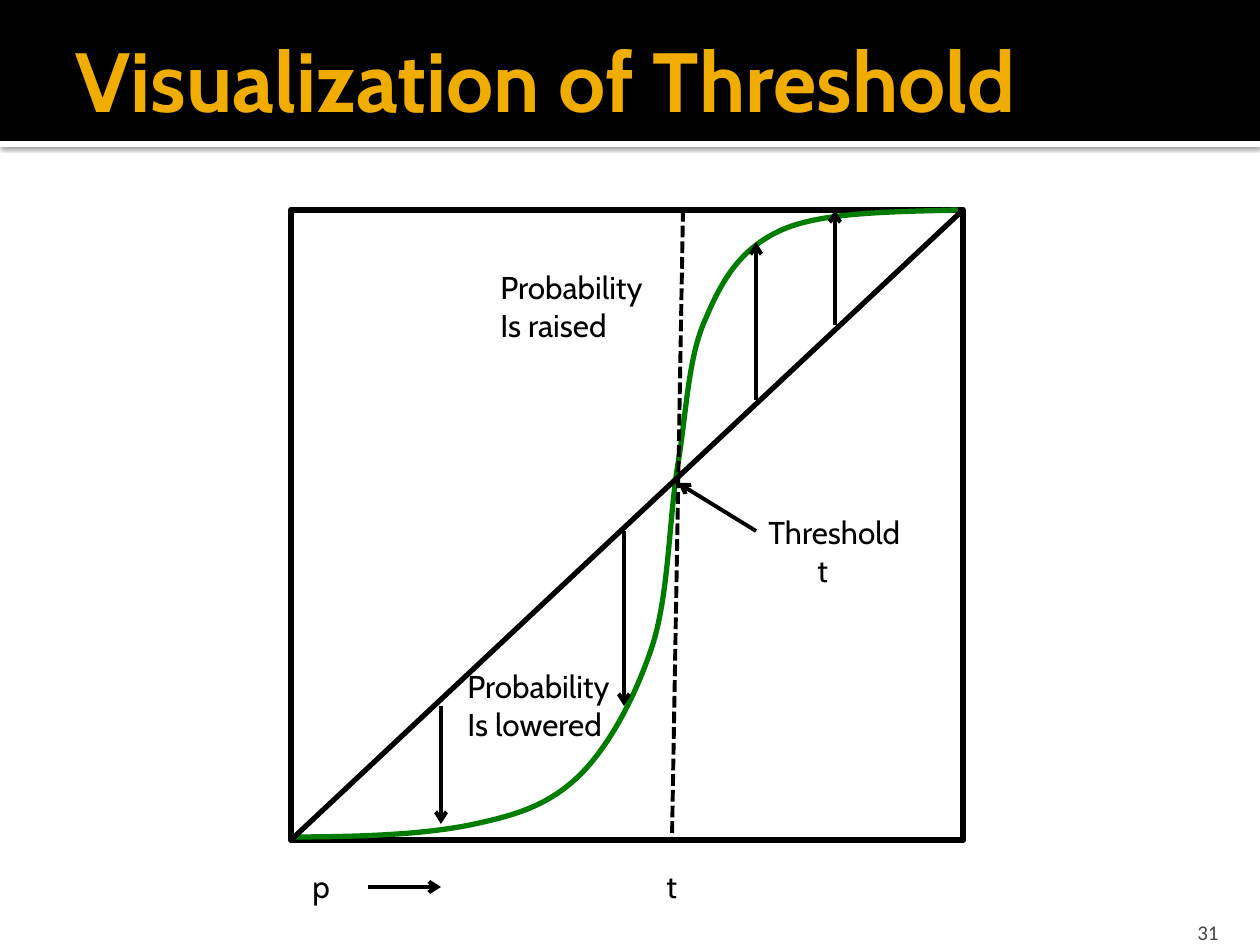
import pptx
import pptx.util
import pptx.dml.color
import pptx.enum.dml
import pptx.enum.shapes
import pptx.enum.text
import pptx.oxml
import pptx.oxml.ns

PX = 914400 / 126
BLACK, WHITE, GOLD, GREEN, GREY = "000000", "FFFFFF", "F0AD00", "007D00", "454545"
ALIGN = pptx.enum.text.PP_ALIGN
ANCHOR = pptx.enum.text.MSO_ANCHOR

TITLE = ("Visualization of Threshold", (63, 21, 1197, 116))
PAGE_NUMBER = ("31", (1130, 907, 101, 38))
WHITE_BAND = (0, 141, 1260, 6)
BLACK_BAND = (0, 0, 1260, 141)
PLOT = (291, 210, 672, 630)

CURVE_START = (290, 837)
CURVE_BEZIERS = [
    [(355, 837), (421, 835), (470, 825)],
    [(518, 815), (549, 805), (580, 775)],
    [(610, 745), (636, 696), (653, 644)],
    [(669, 592), (669, 519), (678, 464)],
    [(687, 410), (688, 357), (706, 318)],
    [(723, 278), (742, 247), (784, 229)],
    [(825, 212), (892, 212), (958, 210)],
]

PLAIN_LINES = [
    ((290, 840), (291, 809), 2.25, None),
    ((291, 840), (963, 210), 3, None),
    ((683, 210), (672, 840), 2.25, pptx.enum.dml.MSO_LINE.SQUARE_DOT),
]
ARROWS = [
    ((756, 531), (678, 483)),
    ((441, 706), (441, 824)),
    ((624, 531), (624, 706)),
    ((756, 400), (756, 242)),
    ((835, 325), (835, 210)),
    ((368, 887), (441, 887)),
]
LABELS = [
    ([("Threshold", 0), ("t", 49)], (756, 507, 158, 89)),
    ([("t", 0)], (654, 861, 37, 50)),
    ([("Probability", 0), ("Is lowered", 0)], (455, 661, 169, 89)),
    ([("Probability", 0), ("Is raised", 0)], (488, 262, 169, 89)),
    ([("p", 0)], (300, 861, 43, 50)),
]


def emu(px):
    return round(px * PX)


def box(bounds):
    return [emu(side) for side in bounds]


def rgb(color):
    return pptx.dml.color.RGBColor.from_string(color)


def add_xml(parent, xml):
    tag, rest = xml.split(" ", 1) if " " in xml else (xml, "/>")
    element = pptx.oxml.parse_xml(f"<{tag} {pptx.oxml.ns.nsdecls('a')} {rest}")
    parent.append(element)
    return element


def set_line(shape, color, width):
    shape.line.color.rgb = rgb(color)
    shape.line.width = pptx.util.Pt(width)


def add_rect(slide, bounds, fill):
    rect = slide.shapes.add_shape(pptx.enum.shapes.MSO_SHAPE.RECTANGLE, *box(bounds))
    rect.shadow.inherit = False
    rect.fill.solid()
    rect.fill.fore_color.rgb = rgb(fill)
    rect.line.fill.background()
    return rect


def add_line(slide, start, end, width, dash=None, arrow=False):
    line = slide.shapes.add_connector(
        pptx.enum.shapes.MSO_CONNECTOR.STRAIGHT, *box(start + end))
    set_line(line, BLACK, width)
    if dash:
        line.line.dash_style = dash
    if arrow:
        add_xml(line.line._get_or_add_ln(), 'a:tailEnd type="arrow"/>')
    add_xml(line._element.spPr, "a:effectLst")


def add_run(paragraph, text, size, font, color, bold=False):
    run = paragraph.add_run()
    run.text = text
    run.font.size = pptx.util.Pt(size)
    run.font.name = font
    run.font.bold = bold
    run.font.color.rgb = rgb(color)


def add_label(slide, lines, bounds):
    frame = slide.shapes.add_textbox(*box(bounds)).text_frame
    frame.word_wrap = False
    for index, (text, indent) in enumerate(lines):
        paragraph = frame.add_paragraph() if index else frame.paragraphs[0]
        if indent:
            paragraph._p.get_or_add_pPr().set("marL", str(emu(indent)))
        add_run(paragraph, text, 18, "Cabin", BLACK)


def add_curve(slide):
    builder = slide.shapes.build_freeform(*CURVE_START, scale=PX)
    builder.add_line_segments(sum(CURVE_BEZIERS, []), close=False)
    curve = builder.convert_to_shape()
    curve.shadow.inherit = False
    curve.fill.background()
    set_line(curve, GREEN, 3)
    outline = curve._element.spPr.find(".//" + pptx.oxml.ns.qn("a:path"))
    segments = outline.findall(pptx.oxml.ns.qn("a:lnTo"))
    for first in range(0, len(segments), 3):
        bezier = add_xml(outline, "a:cubicBezTo")
        for segment in segments[first:first + 3]:
            bezier.append(segment[0])
            outline.remove(segment)


def add_title(slide):
    text, bounds = TITLE
    title = slide.shapes.title
    title.left, title.top, title.width, title.height = box(bounds)
    frame = title.text_frame
    frame.vertical_anchor = ANCHOR.MIDDLE
    frame.margin_right = pptx.util.Inches(0.05)
    frame.paragraphs[0].alignment = ALIGN.LEFT
    add_run(frame.paragraphs[0], text, 48, "Cabin", GOLD, True)
    slide.shapes._spTree.append(title._element)


def add_page_number(slide):
    text, bounds = PAGE_NUMBER
    frame = slide.shapes.add_textbox(*box(bounds)).text_frame
    frame.word_wrap = True
    frame.vertical_anchor = ANCHOR.BOTTOM
    frame.margin_bottom = 0
    frame.paragraphs[0].alignment = ALIGN.RIGHT
    add_run(frame.paragraphs[0], text, 12, "Calibri", GREY)


def main():
    deck = pptx.Presentation()
    deck.slide_width, deck.slide_height = box((1260, 945))
    slide = deck.slides.add_slide(deck.slide_layouts[5])

    band = add_rect(slide, WHITE_BAND, WHITE)
    effects = band._element.spPr.find(pptx.oxml.ns.qn("a:effectLst"))
    shadow = add_xml(effects, 'a:outerShdw blurRad="31750" dist="10160" dir="5400000"></a:outerShdw>')
    shade = add_xml(shadow, f'a:srgbClr val="{BLACK}"></a:srgbClr>')
    add_xml(shade, 'a:alpha val="60000"/>')
    add_rect(slide, BLACK_BAND, BLACK)
    set_line(add_rect(slide, PLOT, WHITE), BLACK, 3.78)

    add_title(slide)
    add_page_number(slide)
    add_curve(slide)
    for start, end, width, dash in PLAIN_LINES:
        add_line(slide, start, end, width, dash)
    for start, end in ARROWS:
        add_line(slide, start, end, 2.25, arrow=True)
    for lines, bounds in LABELS:
        add_label(slide, lines, bounds)

    deck.save("out.pptx")


if __name__ == "__main__":
    main()
